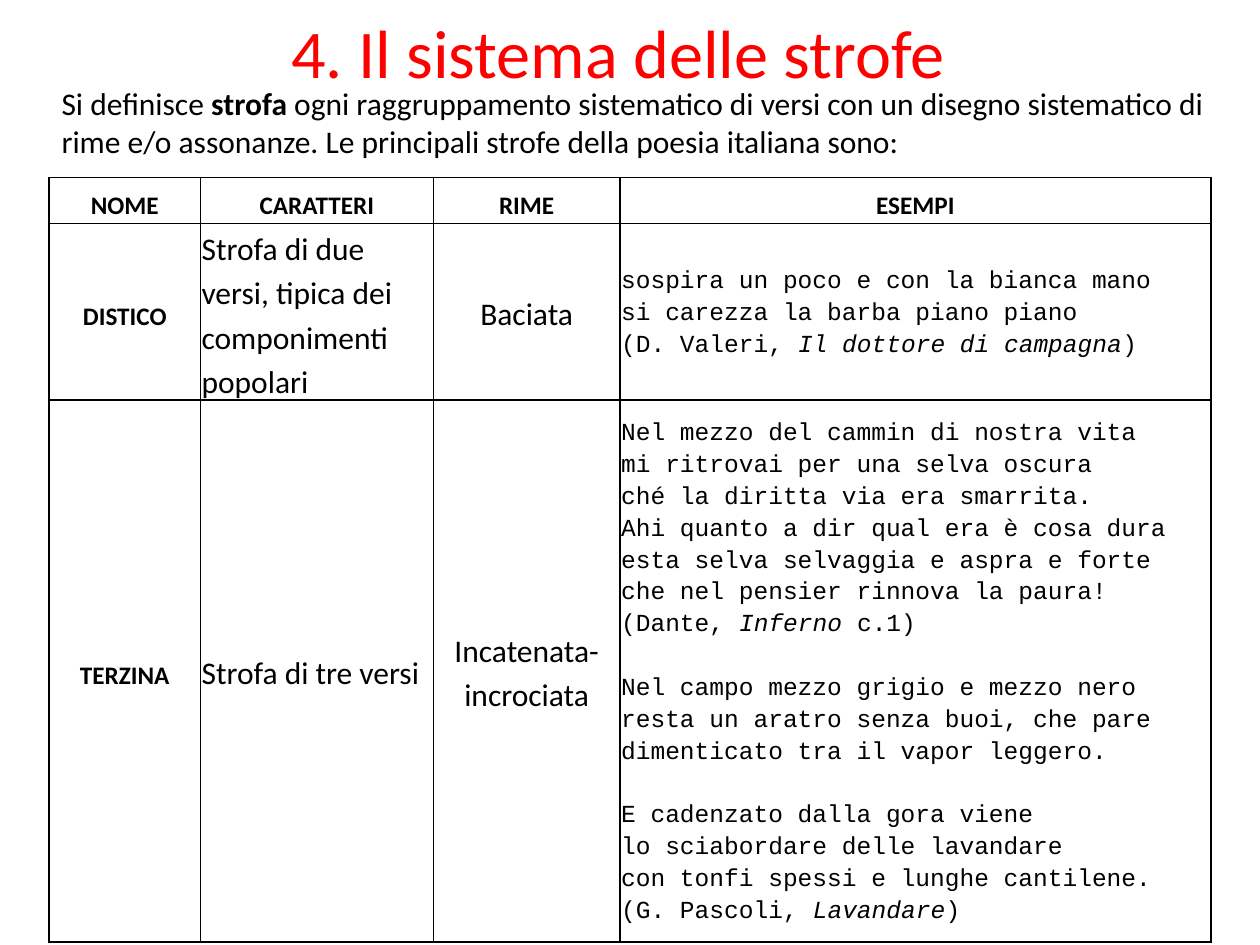
"""Build the slide on the stanza system of Italian poetry."""
from lxml import etree
from pptx import Presentation
from pptx.dml.color import RGBColor
from pptx.enum.text import MSO_ANCHOR, PP_ALIGN
from pptx.oxml.ns import qn
from pptx.util import Inches, Pt

RED = RGBColor(0xFF, 0x00, 0x00)
BLACK = RGBColor(0x00, 0x00, 0x00)
LEFT, CENTER = PP_ALIGN.LEFT, PP_ALIGN.CENTER
MIDDLE = MSO_ANCHOR.MIDDLE
SANS, MONO = "Calibri", "Courier New"
STANZA_GAP = Pt(18.2)

TITLE = "4. Il sistema delle strofe"
INTRO = [
    "Si definisce ",
    "strofa",
    " ogni raggruppamento sistematico di versi con un disegno sistematico "
    "di rime e/o assonanze. Le principali strofe della poesia italiana sono:",
]
HEADERS = ["nome", "caratteri", "rime", "esempi"]
DISTICO = [[
    ["sospira un poco e con la bianca mano"],
    ["si carezza la barba piano piano"],
    ["(D. Valeri, ", "Il dottore di campagna", ")"],
]]
TERZINA = [
    [
        ["Nel mezzo del cammin di nostra vita"],
        ["mi ritrovai per una selva oscura"],
        ["ché la diritta via era smarrita."],
        ["Ahi quanto a dir qual era è cosa dura"],
        ["esta selva selvaggia e aspra e forte"],
        ["che nel pensier rinnova la paura!"],
        ["(Dante, ", "Inferno", " c.1)"],
    ],
    [
        ["Nel campo mezzo grigio e mezzo nero"],
        ["resta un aratro senza buoi, che pare"],
        ["dimenticato tra il vapor leggero."],
    ],
    [
        ["E cadenzato dalla gora viene"],
        ["lo sciabordare delle lavandare"],
        ["con tonfi spessi e lunghe cantilene."],
        ["(G. Pascoli, ", "Lavandare", ")"],
    ],
]
ROWS = [
    ("distico", "Strofa di due versi, tipica dei componimenti popolari",
     "Baciata", DISTICO),
    ("terzina", "Strofa di tre versi", "Incatenata-incrociata", TERZINA),
]
COL_WIDTHS = [1.2, 1.85, 1.48, 4.69]
ROW_HEIGHTS = [0.36, 1.4, 4.3]


def set_font(p, size, name=SANS, color=BLACK):
    p.font.size, p.font.name = Pt(size), name
    p.font.color.rgb = color


def add_text(slide, left, top, width, height):
    tf = slide.shapes.add_textbox(
        Inches(left), Inches(top), Inches(width), Inches(height)).text_frame
    tf.word_wrap = True
    return tf


def add_runs(p, parts, style):
    for i, part in enumerate(parts):
        r = p.add_run()
        r.text = part
        if i == 1:
            setattr(r.font, style, True)


def format_cell(cell):
    cell.vertical_anchor = MIDDLE
    cell.margin_left = cell.margin_right = Inches(0.01)
    cell.margin_top = cell.margin_bottom = Inches(0.01)
    tc_pr = cell._tc.get_or_add_tcPr()
    for side in ("lnL", "lnR", "lnT", "lnB"):
        ln = etree.SubElement(tc_pr, qn(f"a:{side}"), w=str(Pt(1)))
        fill = etree.SubElement(ln, qn("a:solidFill"))
        etree.SubElement(fill, qn("a:srgbClr"), val=str(BLACK))
    cell.fill.background()


def fill_label(cell, text, align=CENTER, heading=False):
    p = cell.text_frame.paragraphs[0]
    p.text, p.alignment, p.line_spacing = text, align, 1.15
    set_font(p, 18)
    if heading:
        p.font.bold = True
        p._p.get_or_add_pPr().get_or_add_defRPr().set("cap", "small")


def fill_verses(cell, stanzas):
    tf = cell.text_frame
    for s, stanza in enumerate(stanzas):
        for v, verse in enumerate(stanza):
            p = tf.add_paragraph() if s or v else tf.paragraphs[0]
            p.line_spacing = 1.15
            if s and not v:
                p.space_before = STANZA_GAP
            set_font(p, 14, MONO)
            add_runs(p, verse, "italic")


def main():
    prs = Presentation()
    prs.slide_width, prs.slide_height = Inches(10), Inches(7.5)
    slide = prs.slides.add_slide(prs.slide_layouts[6])

    tf = add_text(slide, 0.31, 0, 9.19, 1.09)
    tf.margin_top = Inches(0.08)
    p = tf.paragraphs[0]
    p.text, p.alignment = TITLE, CENTER
    set_font(p, 39, color=RED)

    p = add_text(slide, 0.39, 0.62, 9.38, 0.71).paragraphs[0]
    set_font(p, 18)
    add_runs(p, INTRO, "bold")

    table = slide.shapes.add_table(
        len(ROW_HEIGHTS), len(COL_WIDTHS), Inches(0.39), Inches(1.41),
        Inches(sum(COL_WIDTHS)), Inches(sum(ROW_HEIGHTS))).table
    table.first_row = table.horz_banding = False
    for col, width in zip(table.columns, COL_WIDTHS):
        col.width = Inches(width)
    for row, height in zip(table.rows, ROW_HEIGHTS):
        row.height = Inches(height)
    for cell in table.iter_cells():
        format_cell(cell)

    for c, header in enumerate(HEADERS):
        fill_label(table.cell(0, c), header, heading=True)
    for i, (name, features, rhyme, stanzas) in enumerate(ROWS, 1):
        fill_label(table.cell(i, 0), name, heading=True)
        fill_label(table.cell(i, 1), features, LEFT)
        fill_label(table.cell(i, 2), rhyme)
        fill_verses(table.cell(i, 3), stanzas)

    prs.save("out.pptx")


if __name__ == "__main__":
    main()
